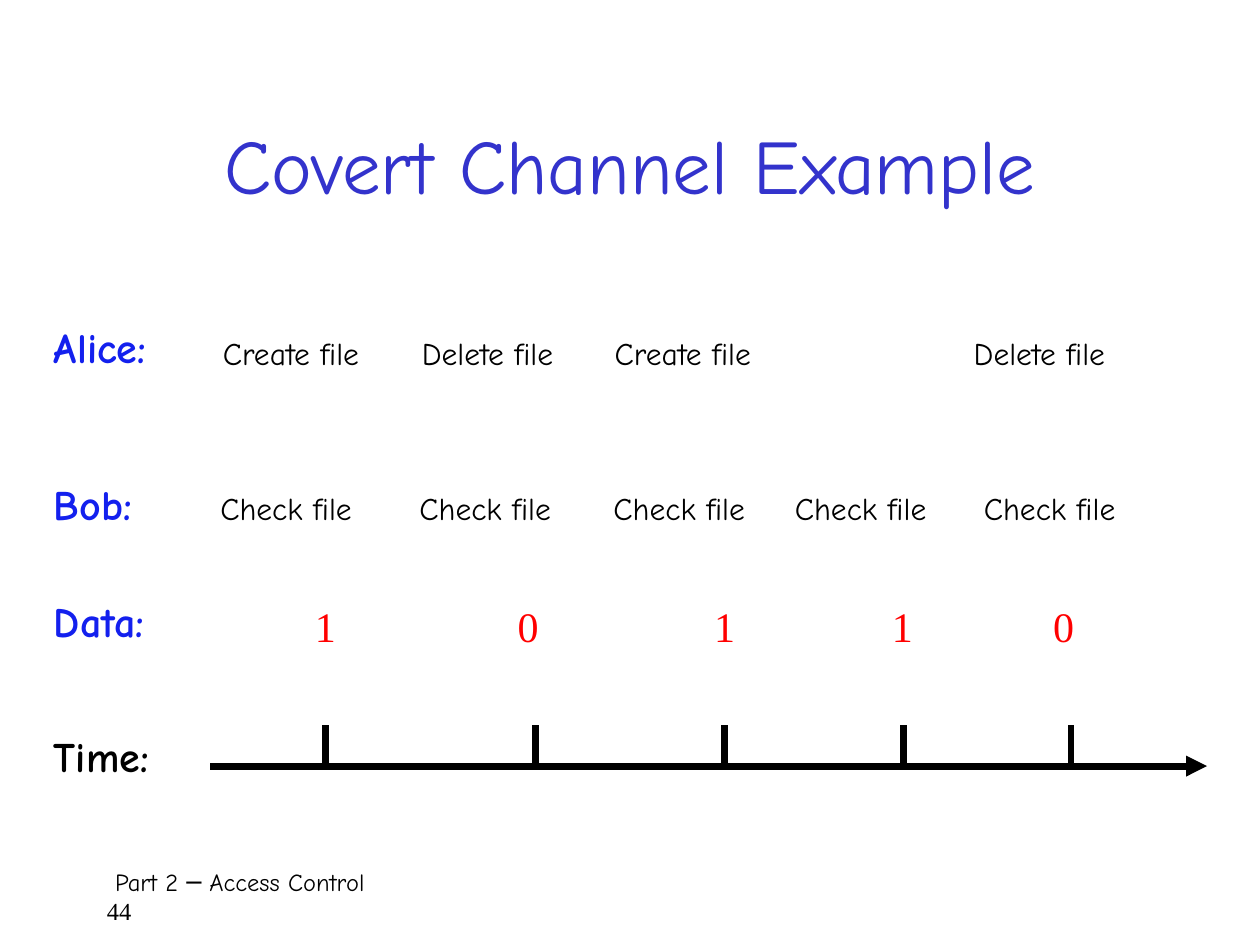
from dataclasses import dataclass

from lxml import etree
from pptx import Presentation
from pptx.dml.color import RGBColor
from pptx.enum.shapes import MSO_CONNECTOR
from pptx.enum.text import MSO_ANCHOR, PP_ALIGN
from pptx.oxml.ns import qn
from pptx.util import Inches, Pt

STRAIGHT = MSO_CONNECTOR.STRAIGHT
LEFT, CENTER = PP_ALIGN.LEFT, PP_ALIGN.CENTER
TOP, MIDDLE = MSO_ANCHOR.TOP, MSO_ANCHOR.MIDDLE
COMIC, TIMES = "Comic Neue", "Times New Roman"
BLACK, BLUE, RED, INDIGO = "000000", "1320EE", "FF0000", "3333CC"
AXIS = 6.08


@dataclass
class Style:
    size: int
    color: str = BLACK
    font: str = COMIC
    bold: bool = False


@dataclass
class Step:
    tick: float
    act: str
    act_x: float
    check_x: float
    bit: str
    bit_x: float


@dataclass
class Label:
    text: str
    top: float
    width: float
    color: str = BLUE


STEPS = [
    Step(2.58, "Create file", 1.67, 1.65, "1", 2.4),
    Step(4.25, "Delete file", 3.25, 3.23, "0", 4.01),
    Step(5.75, "Create file", 4.78, 4.77, "1", 5.57),
    Step(7.17, "", 0, 6.21, "1", 6.98),
    Step(8.5, "Delete file", 7.63, 7.71, "0", 8.26),
]
LABELS = [
    Label("Alice:", 2.5, 1.13),
    Label("Bob:", 3.75, 0.93),
    Label("Data:", 4.68, 1.11),
    Label("Time:", 5.75, 1.12, BLACK),
]
ACTION, BIT, NOTE = Style(18), Style(24, RED, TIMES), Style(14)


def paint(code: str) -> RGBColor:
    return RGBColor.from_string(code)


def add_run(para, text: str, style: Style) -> None:
    run = para.add_run()
    run.text = text
    font = run.font
    font.name, font.size, font.bold = style.font, Pt(style.size), style.bold
    font.color.rgb = paint(style.color)


def add_text(slide, text: str, style: Style, left: float, top: float,
             width: float, height: float, align=LEFT, anchor=TOP):
    box = slide.shapes.add_textbox(
        Inches(left), Inches(top), Inches(width), Inches(height))
    frame = box.text_frame
    frame.word_wrap = True
    frame.vertical_anchor = anchor
    para = frame.paragraphs[0]
    para.alignment = align
    add_run(para, text, style)
    return frame


def add_line(slide, x1: float, y1: float, x2: float, y2: float,
             arrow: bool = False) -> None:
    line = slide.shapes.add_connector(
        STRAIGHT, Inches(x1), Inches(y1), Inches(x2), Inches(y2))
    line.line.width = Pt(4)
    line.line.color.rgb = paint(BLACK)
    if arrow:
        stroke = line.line._get_or_add_ln()
        etree.SubElement(stroke, qn("a:tailEnd"), type="triangle")
    etree.SubElement(line._element.spPr, qn("a:effectLst"))


def draw_step(slide, step: Step) -> None:
    if step.act:
        add_text(slide, step.act, ACTION, step.act_x, 2.6, 1.47, 0.45)
    add_text(slide, "Check file", ACTION, step.check_x, 3.83, 1.37, 0.45)
    add_text(slide, step.bit, BIT, step.bit_x, 4.72, 0.39, 0.5)
    add_line(slide, step.tick, AXIS, step.tick, 5.75)


def main() -> None:
    """Build the covert channel slide."""
    deck = Presentation()
    deck.slide_width, deck.slide_height = Inches(10), Inches(7.5)
    slide = deck.slides.add_slide(deck.slide_layouts[6])
    foot = add_text(slide, " Part 2 ─ Access Control", NOTE,
                    0.75, 6.83, 8.58, 0.5)
    add_run(foot.add_paragraph(), "44", Style(14, font=TIMES))
    add_text(slide, "Covert Channel Example", Style(44, INDIGO),
             0.75, 0.67, 8.5, 1.25, CENTER, MIDDLE)
    for label in LABELS:
        add_text(slide, label.text, Style(24, label.color, bold=True),
                 0.33, label.top, label.width, 0.57)
    add_line(slide, 1.67, AXIS, 9.58, AXIS, arrow=True)
    for step in STEPS:
        draw_step(slide, step)
    deck.save("out.pptx")


if __name__ == "__main__":
    main()
